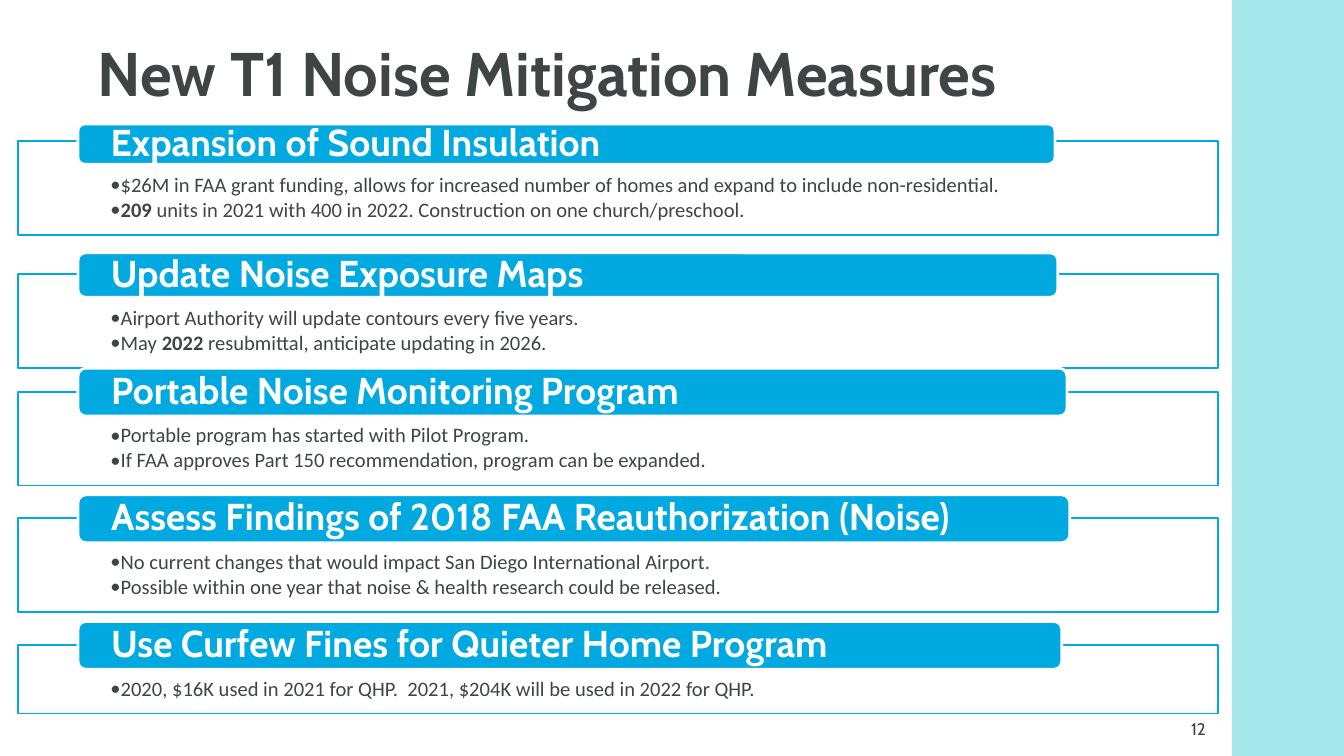
import lxml.etree
import pptx
import pptx.dml.color
import pptx.enum.shapes
import pptx.enum.text
import pptx.oxml.ns
import pptx.util

WIDTH, HEIGHT = pptx.util.Pt(720), pptx.util.Pt(405)
SHAPES = pptx.enum.shapes.MSO_SHAPE
ALIGN = pptx.enum.text.PP_ALIGN
ANCHOR = pptx.enum.text.MSO_ANCHOR
BLUE, WHITE, DARK = "00A9E0", "FFFFFF", "3F4444"

TITLE_FONT = {"name": "Cabin", "size": pptx.util.Pt(33), "bold": True}
HEADER_FONT = {"name": "Cabin", "size": pptx.util.Pt(20), "bold": True}
BULLET_FONT = {"name": "Calibri", "size": pptx.util.Pt(11)}
NUMBER_FONT = {"name": "Cabin", "size": pptx.util.Pt(9)}
TIGHT = {"alignment": ALIGN.LEFT, "line_spacing": 0.9}
BULLET = {**TIGHT, "level": 1, "space_after": pptx.util.Pt(1.5)}

MEASURES = [
    ("Expansion of Sound Insulation", (16.4, 72.7, 5.33), (18.67, 12.44),
     ["$26M in FAA grant funding, allows for increased number of homes and expand to include non-residential.",
      "*209* units in 2021 with 400 in 2022. Construction on one church/preschool."]),
    ("Update Noise Exposure Maps", (33.45, 72.9, 5.87), (36.27, 12.44),
     ["Airport Authority will update contours every five years.",
      "May *2022 *resubmittal, anticipate updating in 2026."]),
    ("Portable Noise Monitoring Program", (48.7, 73.6, 6.35), (51.8, 12.44),
     ["Portable program has started with Pilot Program.",
      "If FAA approves Part 150 recommendation, program can be expanded."]),
    ("Assess Findings of 2018 FAA Reauthorization (Noise)", (65.45, 73.8, 6.35), (68.55, 12.44),
     ["No current changes that would impact San Diego International Airport.",
      "Possible within one year that noise & health research could be released."]),
    ("Use Curfew Fines for Quieter Home Program", (82.2, 73.2, 6.35), (85.33, 9.07),
     ["2020, $16K used in 2021 for QHP.\u00a0 2021, $204K will be used in 2022 for QHP."]),
]


def rgb(value):
    """Turn a hex string into a colour."""
    return pptx.dml.color.RGBColor.from_string(value)


def apply(target, values):
    """Set each attribute named in a dict of format values."""
    for name, value in values.items():
        setattr(target, name, value)


def place(left, top, width, height):
    """Turn percentages of the slide's size into lengths."""
    return [int(share * full / 100) for share, full in
            zip((left, top, width, height), (WIDTH, HEIGHT, WIDTH, HEIGHT))]


def insets(left, top, right, bottom):
    """Give text frame margins in inches as format values."""
    return {f"margin_{side}": pptx.util.Inches(size) for side, size in
            zip(("left", "top", "right", "bottom"), (left, top, right, bottom))}


def add_box(s, kind, area, fill, line=None, weight=1, opacity=100):
    """Add a flat preset shape."""
    sp = s.shapes.add_shape(kind, *place(*area))
    sp.shadow.inherit = False
    sp.fill.solid()
    sp.fill.fore_color.rgb = rgb(fill)
    if opacity < 100:
        color = sp.fill._xPr.find(".//" + pptx.oxml.ns.qn("a:srgbClr"))
        lxml.etree.SubElement(color, pptx.oxml.ns.qn("a:alpha"), val=str(opacity * 1000))
    if line:
        sp.line.color.rgb = rgb(line)
        sp.line.width = pptx.util.Pt(weight)
    else:
        sp.line.fill.background()
    return sp


def write(p, text, font, color, layout):
    """Fill a paragraph, with the parts between asterisks in bold."""
    apply(p, layout)
    for i, part in enumerate(text.split("*")):
        if part:
            r = p.add_run()
            r.text = part
            apply(r.font, font)
            r.font.color.rgb = rgb(color)
            if i % 2:
                r.font.bold = True


def add_bullet(p):
    """Give a paragraph a hanging bullet."""
    indent = pptx.util.Pt(4.5)
    pPr = p._p.get_or_add_pPr()
    pPr.set("marL", str(indent))
    pPr.set("indent", str(-indent))
    lxml.etree.SubElement(pPr, pptx.oxml.ns.qn("a:buFont"), typeface="Calibri")
    lxml.etree.SubElement(pPr, pptx.oxml.ns.qn("a:buChar"), char="•")


def add_title(s, text):
    """Move and format the title placeholder."""
    sp = s.shapes.title
    apply(sp, dict(zip(("left", "top", "width", "height"), place(6.25, 2.67, 81.7, 14.93))))
    tf = sp.text_frame
    apply(tf, {"word_wrap": True, "vertical_anchor": ANCHOR.MIDDLE,
               "auto_size": pptx.enum.text.MSO_AUTO_SIZE.NONE})
    write(tf.paragraphs[0], text, TITLE_FONT, DARK, TIGHT)


def add_measure(s, header, header_area, panel_area, bullets):
    """Add an outlined panel of bullets with its header bar."""
    top, height = panel_area
    panel = add_box(s, SHAPES.RECTANGLE, (1.32, top, 89.3, height), WHITE, BLUE, opacity=90)
    tf = panel.text_frame
    apply(tf, {"word_wrap": True, "vertical_anchor": ANCHOR.TOP, **insets(0.69, 0.25, 0.69, 0.09)})
    for i, text in enumerate(bullets):
        p = tf.add_paragraph() if i else tf.paragraphs[0]
        add_bullet(p)
        write(p, text, BULLET_FONT, DARK, BULLET)

    top, width, height = header_area
    bar = add_box(s, SHAPES.ROUNDED_RECTANGLE, (5.8, top, width, height), BLUE, WHITE, 1.5)
    tf = bar.text_frame
    apply(tf, {"word_wrap": True, "vertical_anchor": ANCHOR.MIDDLE, **insets(0.23, 0, 0.23, 0)})
    write(tf.paragraphs[0], header, HEADER_FONT, WHITE, TIGHT)


def add_number(s, text):
    """Add the slide number at the lower right."""
    tf = s.shapes.add_textbox(*place(69, 94.22, 21.7, 4.44)).text_frame
    tf.word_wrap = True
    write(tf.paragraphs[0], text, NUMBER_FONT, "3D4543", {"alignment": ALIGN.RIGHT})


def main():
    """Build and save the slide."""
    prs = pptx.Presentation()
    apply(prs, {"slide_width": WIDTH, "slide_height": HEIGHT})
    s = prs.slides.add_slide(prs.slide_layouts[5])
    add_box(s, SHAPES.RECTANGLE, (91.65, 0, 8.35, 100), "1ECAD3", opacity=40)
    add_number(s, "12")
    add_title(s, "New T1 Noise Mitigation Measures")
    for measure in MEASURES:
        add_measure(s, *measure)
    prs.save("out.pptx")


if __name__ == "__main__":
    main()
